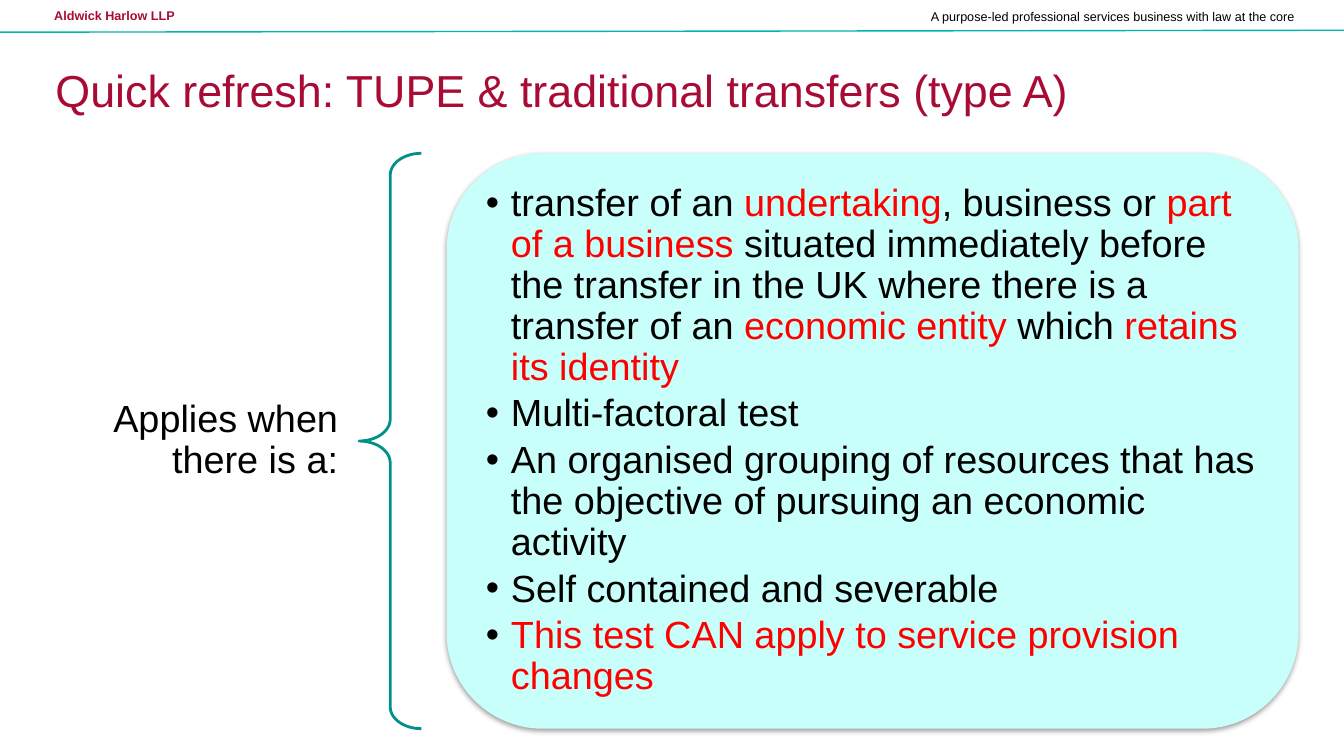
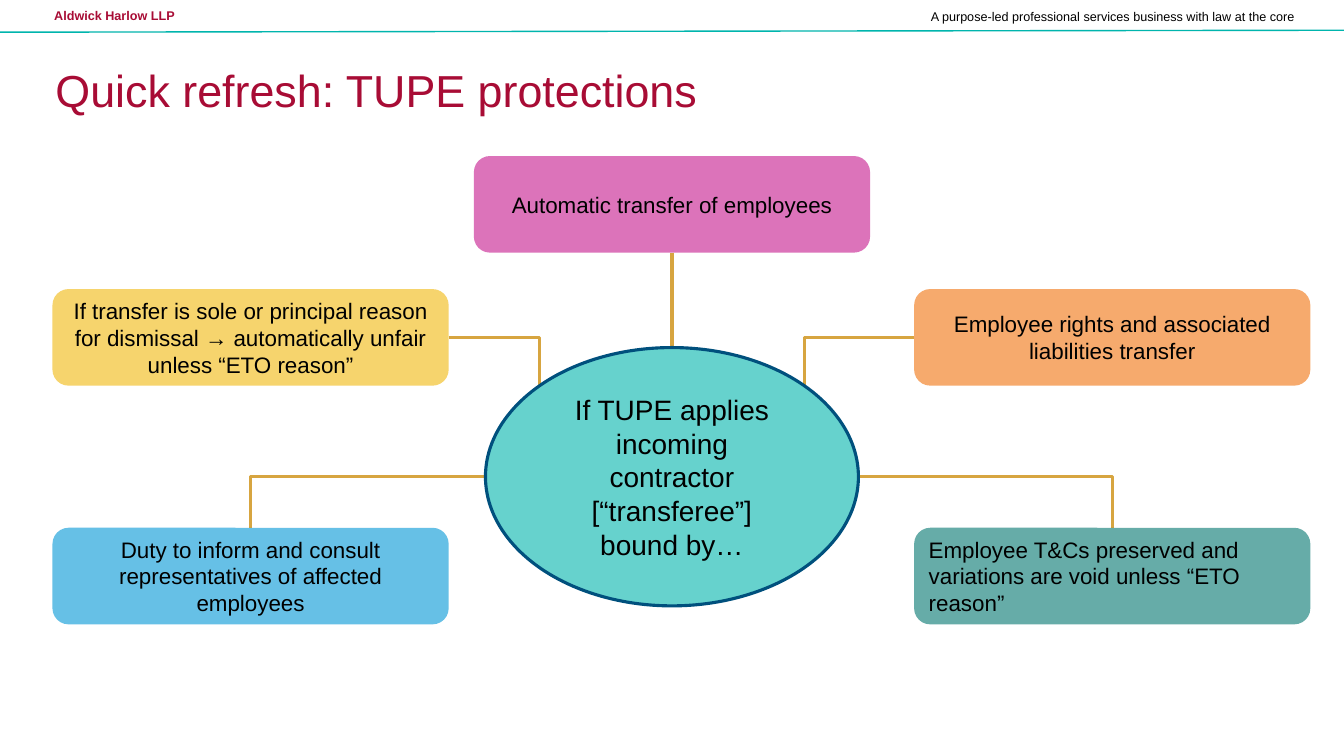
from lxml import etree
from pptx import Presentation
from pptx.dml.color import RGBColor
from pptx.enum.shapes import MSO_CONNECTOR, MSO_SHAPE
from pptx.enum.text import MSO_ANCHOR, PP_ALIGN
from pptx.oxml.ns import qn
from pptx.util import Pt

LEFT, MID, RIGHT = PP_ALIGN.LEFT, PP_ALIGN.CENTER, PP_ALIGN.RIGHT
CENTRE = MSO_ANCHOR.MIDDLE
ROUND, OVAL, BRACE = MSO_SHAPE.ROUNDED_RECTANGLE, MSO_SHAPE.OVAL, MSO_SHAPE.LEFT_BRACE
STRAIGHT = MSO_CONNECTOR.STRAIGHT

BLACK, RED, WINE = "000000", "FF0000", "A80C35"
TEAL, GOLD, NAVY = "00B5AD", "D7A540", "00507D"
WIDTH, HEIGHT = 960, 540


def tint(code):
    return RGBColor.from_string(code)


def child(parent, tag, **attrs):
    node = etree.SubElement(parent, qn(tag))
    for name, value in attrs.items():
        node.set(name, str(value))
    return node


class Deck:
    font = "Arial"

    def __init__(self):
        self.prs = Presentation()
        self.prs.slide_width, self.prs.slide_height = Pt(WIDTH), Pt(HEIGHT)
        self.slide = None

    def page(self, title):
        self.slide = self.prs.slides.add_slide(self.prs.slide_layouts[5])
        head = self.slide.shapes.title
        head.left, head.top, head.width, head.height = Pt(32.4), Pt(28), Pt(896), Pt(72)
        self.label(head, title, 32, WINE)
        self.text((31.7, 2), (380, 18), "Aldwick Harlow LLP", 9, WINE, bold=True)
        self.text((384, 1.5), (547.6, 20.5),
                  "A purpose-led professional services business with law at the core",
                  9, align=RIGHT)
        self.rule((0, 23), (WIDTH, 21.6), TEAL, 1)

    def style(self, run, size, color, bold=False):
        font = run.font
        font.name, font.size, font.bold = self.font, Pt(size), bold
        font.color.rgb = tint(color)

    def frame(self, shape, inset=(7.2, 3.6)):
        frame = shape.text_frame
        frame.word_wrap = True
        frame.vertical_anchor = CENTRE
        frame.margin_left = frame.margin_right = Pt(inset[0])
        frame.margin_top = frame.margin_bottom = Pt(inset[1])
        return frame

    def label(self, shape, words, size, color=BLACK, align=LEFT, bold=False,
              inset=(7.2, 3.6), space=1.0):
        frame = self.frame(shape, inset)
        frame.text = words
        para = frame.paragraphs[0]
        para.alignment = align
        para.line_spacing = space
        self.style(para.runs[0], size, color, bold)

    def text(self, pos, dims, words, size, color=BLACK, **rest):
        box = self.slide.shapes.add_textbox(*map(Pt, pos + dims))
        self.label(box, words, size, color, **rest)

    def shape(self, kind, pos, dims, fill=None, alpha=100, line=None, weight=2.25):
        shape = self.slide.shapes.add_shape(kind, *map(Pt, pos + dims))
        shape.shadow.inherit = False
        if fill:
            shape.fill.solid()
            shape.fill.fore_color.rgb = tint(fill)
            if alpha < 100:
                code = shape._element.spPr.find(qn("a:solidFill"))[0]
                child(code, "a:alpha", val=alpha * 1000)
        else:
            shape.fill.background()
        if line:
            shape.line.color.rgb = tint(line)
            shape.line.width = Pt(weight)
        else:
            shape.line.fill.background()
        return shape

    def shade(self, shape, blur, dist, alpha):
        glow = shape._element.spPr.find(qn("a:effectLst"))
        drop = child(glow, "a:outerShdw", blurRad=Pt(blur), dist=Pt(dist),
                     dir=5400000, algn="t", rotWithShape=0)
        code = child(drop, "a:srgbClr", val=BLACK)
        child(code, "a:alpha", val=alpha * 1000)

    def rule(self, start, end, color, weight, bent=False):
        line = self.slide.shapes.add_connector(STRAIGHT, *map(Pt, start + end))
        line.line.color.rgb = tint(color)
        line.line.width = Pt(weight)
        props = line._element.spPr
        if bent:
            props.find(qn("a:prstGeom")).set("prst", "bentConnector2")
        child(props, "a:effectLst")

    def points(self, pos, dims, items, size):
        box = self.slide.shapes.add_textbox(*map(Pt, pos + dims))
        frame = self.frame(box, (8, 8))
        for index, item in enumerate(items):
            para = frame.add_paragraph() if index else frame.paragraphs[0]
            para.line_spacing = 0.9
            para.space_after = Pt(4.2)
            props = para._p.get_or_add_pPr()
            props.set("marL", str(Pt(18)))
            props.set("indent", str(-Pt(18)))
            child(child(props, "a:buClr"), "a:srgbClr", val=BLACK)
            child(props, "a:buFont", typeface=self.font)
            child(props, "a:buChar", char="•")
            for turn, part in enumerate(item.split("*")):
                if part:
                    run = para.add_run()
                    run.text = part
                    self.style(run, size, RED if turn % 2 else BLACK)


def scope(deck):
    deck.page("Quick refresh: TUPE & traditional transfers (type A)")
    top, tall = 109.5, 411
    deck.text((32.5, 281.5), (224, 67), "Applies when there is a:", 27,
              align=RIGHT, inset=(15, 5), space=0.9)
    brace = deck.shape(BRACE, (256.5, top), (44.5, tall), line="00918B", weight=2)
    brace.adjustments[0] = 0.35
    panel = deck.shape(ROUND, (319, top), (608.5, tall), "C9FFFA")
    deck.shade(panel, 3.1, 1.6, 38)
    deck.points((339, top + 20), (569, tall - 40), [
        "transfer of an *undertaking*, business or *part of a business* situated "
        "immediately before the transfer in the UK where there is a transfer of an "
        "*economic entity *which *retains its identity*",
        "Multi-factoral test",
        "An organised grouping of resources that has the objective of pursuing "
        "an economic activity",
        "Self contained and severable",
        "*This test CAN apply to service provision changes*",
    ], 27)


def guard(deck):
    deck.page("Quick refresh: TUPE protections")
    wide, tall = 283, 69
    west, east = 37.5, 653
    mid = WIDTH / 2
    top, high, low = 111.5, 206.5, 377
    hub_w, hub_h, hub_y = 266.4, 184.5, 340.5
    reach = hub_w / 2

    deck.rule((mid, top + tall), (mid, hub_y - hub_h / 2), GOLD, 2.25)
    for side, edge, card in ((-1, west + wide, west), (1, east, east)):
        deck.rule((edge, high + tall / 2), (mid + side * reach * 0.71, high + tall),
                  GOLD, 2.25, bent=True)
        deck.rule((mid + side * reach, hub_y), (card + wide / 2, low),
                  GOLD, 2.25, bent=True)

    cards = [
        (west, high, "F1B80C", MID, "If transfer is sole or principal reason for "
         "dismissal → automatically unfair unless “ETO reason”"),
        (mid - wide / 2, top, "C6168D", MID, "Automatic transfer of employees"),
        (west, low, "0097D6", MID,
         "Duty to inform and consult representatives of affected employees"),
        (east, high, "F1720C", MID, "Employee rights and associated liabilities transfer"),
        (east, low, "00756F", LEFT,
         "Employee T&Cs preserved and variations are void unless “ETO reason”"),
    ]
    for x, y, fill, align, words in cards:
        card = deck.shape(ROUND, (x, y), (wide, tall), fill, 60)
        deck.label(card, words, 16, align=align)

    hub = deck.shape(OVAL, (mid - reach, hub_y - hub_h / 2), (hub_w, hub_h),
                     TEAL, 60, NAVY)
    deck.label(hub, "If TUPE applies incoming contractor [“transferee”] bound by…",
               20, align=MID, inset=(10, 3.6))


def main():
    deck = Deck()
    scope(deck)
    guard(deck)
    deck.prs.save("out.pptx")


if __name__ == "__main__":
    main()
